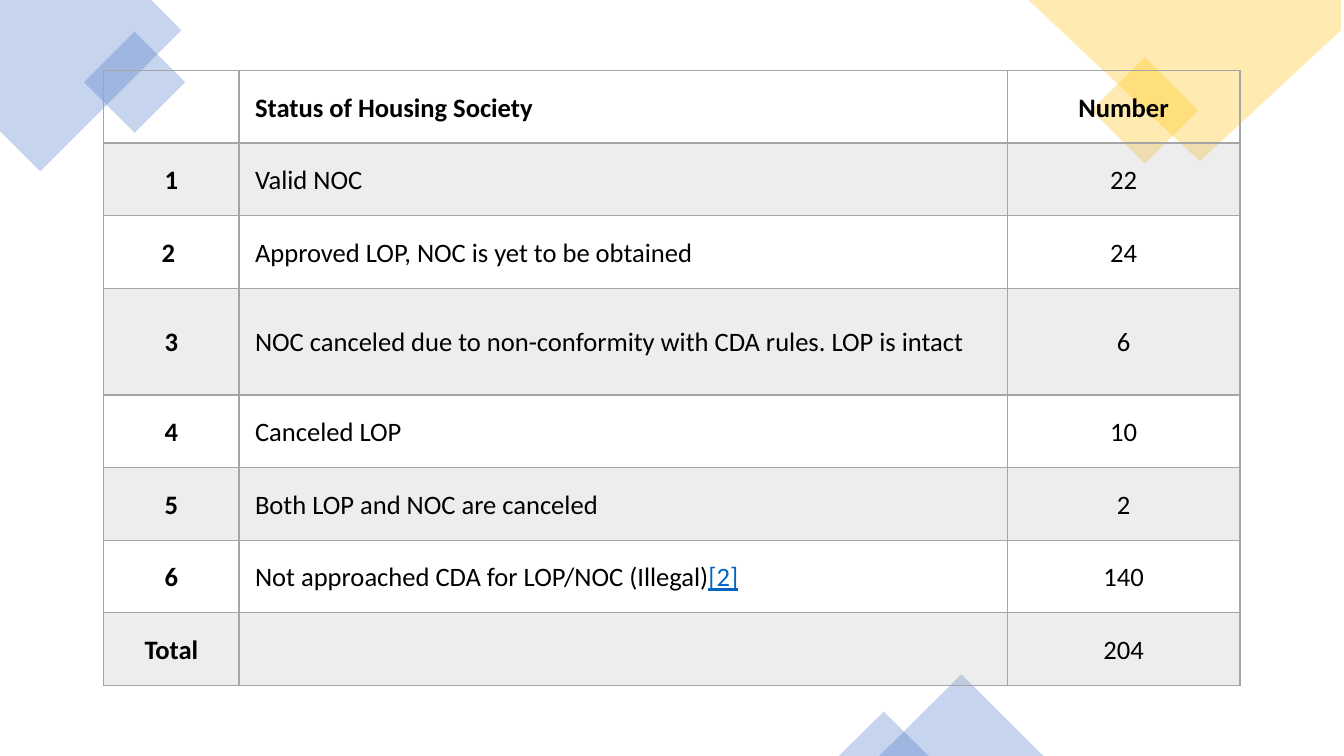
import pptx
import pptx.dml.color
import pptx.enum.shapes
import pptx.enum.text
import pptx.oxml
import pptx.oxml.ns
import pptx.util

SHAPES = pptx.enum.shapes.MSO_SHAPE
ALIGN = pptx.enum.text.PP_ALIGN
BLUE, YELLOW, GREY, BLACK, LINK = "4472C4", "FFC000", "A5A5A5", "000000", "0563C1"

COLUMN_WIDTHS = (13.4, 76.2, 23.1)
ROW_HEIGHTS = (7.2, 7.2, 7.2, 10.6, 7.2, 7.2, 7.2, 7.2)
SOCIETIES = (
    ("", ("Status of Housing Society",), "Number"),
    ("1", ("Valid NOC",), "22"),
    ("2 ", ("Approved LOP, NOC is yet to be obtained",), "24"),
    ("3", ("NOC canceled due to non-conformity with CDA rules. LOP is intact",), "6"),
    ("4", ("Canceled LOP",), "10"),
    ("5", ("Both LOP and NOC are canceled",), "2"),
    ("6", ("Not approached CDA for LOP/NOC (Illegal)", "[2]"), "140"),
    ("Total", (), "204"),
)


def color(value):
    return pptx.dml.color.RGBColor.from_string(value)


class SlideBuilder:
    """Draws styled elements on a slide with a grid of tenths of an inch."""

    font_name = "Calibri"
    font_size = 19
    cell_margin = 1.6

    def __init__(self, presentation):
        self.slide = presentation.slides.add_slide(presentation.slide_layouts[6])

    def cells(self, count):
        return pptx.util.Inches(count / 10)

    def tint(self, fill, element, value, percent):
        fill.solid()
        fill.fore_color.rgb = color(value)
        for node in element.iter(pptx.oxml.ns.qn("a:srgbClr")):
            alpha = node.makeelement(pptx.oxml.ns.qn("a:alpha"), {"val": str(percent * 1000)})
            node.append(alpha)

    def decorate(self, shape, value):
        shape.shadow.inherit = False
        shape.line.fill.background()
        self.tint(shape.fill, shape._element.spPr, value, 30)

    def preset(self, kind, left, top, width, height, value, rotation=0):
        box = map(self.cells, (left, top, width, height))
        shape = self.slide.shapes.add_shape(kind, *box)
        shape.rotation = rotation
        self.decorate(shape, value)

    def polygon(self, points, value):
        builder = self.slide.shapes.build_freeform(*points[0], scale=self.cells(1))
        builder.add_line_segments(points[1:], close=True)
        self.decorate(builder.convert_to_shape(), value)

    def cell_text(self, cell, texts, bold, align):
        paragraph = cell.text_frame.paragraphs[0]
        paragraph.alignment = align
        paragraph.line_spacing = 1.07
        paragraph.space_after = pptx.util.Pt(18)
        for index, text in enumerate(texts):
            run = paragraph.add_run()
            run.text = text
            run.font.name = self.font_name
            run.font.size = pptx.util.Pt(self.font_size)
            run.font.bold = bold
            run.font.underline = index > 0
            run.font.color.rgb = color(LINK if index else BLACK)

    def border(self, cell, widths):
        properties = cell._tc.get_or_add_tcPr()
        for index, (side, width) in enumerate(widths.items()):
            line = pptx.oxml.parse_xml(
                f'<a:ln{side} {pptx.oxml.ns.nsdecls("a")} w="{pptx.util.Pt(width)}">'
                f'<a:solidFill><a:srgbClr val="{GREY}"/></a:solidFill></a:ln{side}>'
            )
            properties.insert(index, line)

    def style_cell(self, cell, row):
        cell.vertical_anchor = pptx.enum.text.MSO_ANCHOR.MIDDLE
        margin = self.cells(self.cell_margin)
        cell.margin_left = cell.margin_right = margin
        cell.margin_top = cell.margin_bottom = margin
        if row % 2:
            self.tint(cell.fill, cell._tc.tcPr, GREY, 20)
        else:
            cell.fill.background()
        self.border(cell, {"L": 1, "R": 1, "T": 2 if row == 1 else 1, "B": 1 if row else 2})

    def table(self, left, top, widths, heights, records):
        box = map(self.cells, (left, top, sum(widths), sum(heights)))
        table = self.slide.shapes.add_table(len(heights), len(widths), *box).table
        table.first_row = table.horz_banding = False
        for column, width in zip(table.columns, widths):
            column.width = self.cells(width)
        for row, (height, record) in enumerate(zip(heights, records)):
            table.rows[row].height = self.cells(height)
            number, status, count = record
            for column, texts in enumerate(((number,) if number else (), status, (count,))):
                cell = table.cell(row, column)
                self.style_cell(cell, row)
                if texts:
                    align = ALIGN.LEFT if column == 1 else ALIGN.CENTER
                    self.cell_text(cell, texts, row == 0 or column == 0, align)


def main():
    presentation = pptx.Presentation()
    presentation.slide_width = pptx.util.Inches(13.33)
    presentation.slide_height = pptx.util.Inches(7.5)
    builder = SlideBuilder(presentation)
    builder.polygon(((15.3, 0), (0, 0), (0, 13), (4.1, 17.1), (18.3, 3)), BLUE)
    builder.preset(SHAPES.RECTANGLE, 9.8, 4.6, 7.1, 7.1, BLUE, 315)
    builder.preset(SHAPES.RECTANGLE, 109.8, 7.2, 7.5, 7.5, YELLOW, 315)
    builder.polygon(((133.3, 0), (102.3, 0), (119.3, 16.2), (133.3, 2.8)), YELLOW)
    builder.preset(SHAPES.ISOSCELES_TRIANGLE, 87.2, 66.9, 16.3, 8.1, BLUE)
    builder.preset(SHAPES.ISOSCELES_TRIANGLE, 83.2, 70.6, 8.9, 4.4, BLUE)
    builder.table(10.3, 7, COLUMN_WIDTHS, ROW_HEIGHTS, SOCIETIES)
    presentation.save("out.pptx")


if __name__ == "__main__":
    main()
